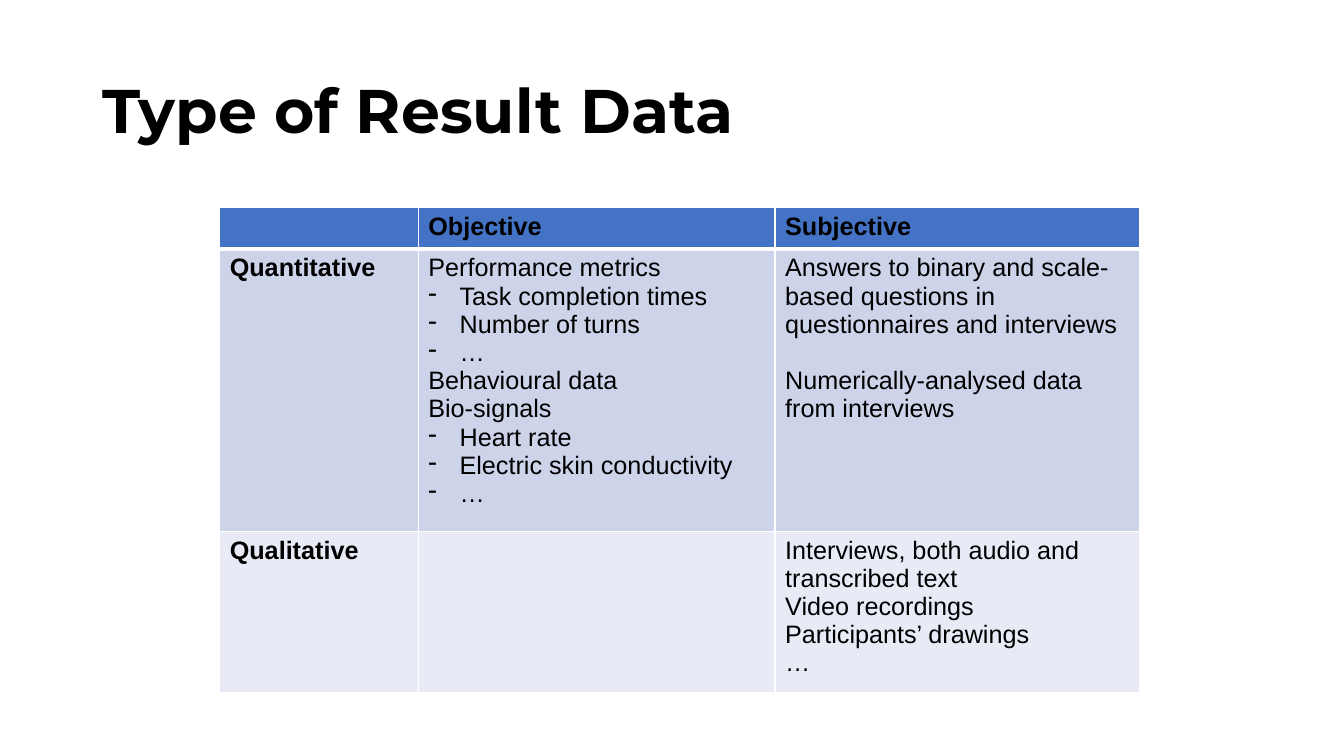
from dataclasses import dataclass

from lxml.etree import SubElement
from pptx import Presentation
from pptx.dml.color import RGBColor
from pptx.enum.text import MSO_ANCHOR
from pptx.oxml.ns import qn
from pptx.util import Emu, Inches, Pt


@dataclass(frozen=True)
class Theme:
    ink: str = "000000"
    rule: str = "FFFFFF"
    header_fill: str = "4472C4"
    quantitative_fill: str = "CDD4EA"
    qualitative_fill: str = "E8EBF5"
    title_font: str = "Montserrat"
    body_font: str = "Arial"
    title_size: int = 44
    body_size: int = 18
    thin_rule: int = 1
    header_rule: int = 3


@dataclass(frozen=True)
class Line:
    text: str
    dashed: bool = False
    gap_before: int = 0


@dataclass(frozen=True)
class Row:
    height: float
    fill: str
    cells: tuple[tuple[Line, ...], ...]


THEME = Theme()
COLUMN_WIDTHS = (1.97, 3.54, 3.62)
DASH_INDENT = Inches(0.31)

ROWS = (
    Row(0.41, THEME.header_fill, ((), (Line("Objective"),), (Line("Subjective"),))),
    Row(2.8, THEME.quantitative_fill, (
        (Line("Quantitative"),),
        (
            Line("Performance metrics"),
            Line("Task completion times", dashed=True),
            Line("Number of turns", dashed=True),
            Line("…", dashed=True),
            Line("Behavioural data"),
            Line("Bio-signals"),
            Line("Heart rate", dashed=True),
            Line("Electric skin conductivity", dashed=True),
            Line("…", dashed=True),
        ),
        (
            Line("Answers to binary and scale-based questions in questionnaires and interviews"),
            Line("Numerically-analysed data from interviews", gap_before=20),
        ),
    )),
    Row(1.5, THEME.qualitative_fill, (
        (Line("Qualitative"),),
        (),
        (
            Line("Interviews, both audio and transcribed text"),
            Line("Video recordings"),
            Line("Participants’ drawings"),
            Line("…"),
        ),
    )),
)


def add_run(paragraph, text: str, font_name: str, size: int, bold: bool) -> None:
    run = paragraph.add_run()
    run.text = text
    run.font.name = font_name
    run.font.size = Pt(size)
    run.font.bold = bold
    run.font.color.rgb = RGBColor.from_string(THEME.ink)


def add_dash(paragraph) -> None:
    """Give the paragraph a hanging dash bullet."""
    properties = paragraph._p.get_or_add_pPr()
    properties.set("marL", str(DASH_INDENT))
    properties.set("indent", str(-DASH_INDENT))
    SubElement(properties, qn("a:buFontTx"))
    SubElement(properties, qn("a:buChar"), char="-")


def add_borders(cell, top: int, bottom: int) -> None:
    properties = cell._tc.get_or_add_tcPr()
    weights = {"L": THEME.thin_rule, "R": THEME.thin_rule, "T": top, "B": bottom}
    for side, weight in weights.items():
        border = SubElement(properties, qn(f"a:ln{side}"), w=str(Pt(weight)))
        SubElement(SubElement(border, qn("a:solidFill")), qn("a:srgbClr"), val=THEME.rule)


def fill_cell(cell, lines: tuple[Line, ...], bold: bool) -> None:
    for index, line in enumerate(lines):
        frame = cell.text_frame
        paragraph = frame.add_paragraph() if index else frame.paragraphs[0]
        if line.gap_before:
            paragraph.space_before = Pt(line.gap_before)
        if line.dashed:
            add_dash(paragraph)
        add_run(paragraph, line.text, THEME.body_font, THEME.body_size, bold)


def add_title(slide, text: str) -> None:
    frame = slide.shapes.add_textbox(
        Inches(0.92), Inches(0.4), Inches(11.5), Inches(1.45)).text_frame
    frame.word_wrap = True
    frame.vertical_anchor = MSO_ANCHOR.MIDDLE
    paragraph = frame.paragraphs[0]
    paragraph.line_spacing = 0.9
    add_run(paragraph, text, THEME.title_font, THEME.title_size, bold=True)


def add_data_types(slide) -> None:
    table = slide.shapes.add_table(
        len(ROWS), len(COLUMN_WIDTHS), Inches(2.18), Inches(2.06),
        Inches(sum(COLUMN_WIDTHS)), Inches(sum(row.height for row in ROWS))).table
    for column, width in zip(table.columns, COLUMN_WIDTHS):
        column.width = Inches(width)
    for r, row in enumerate(ROWS):
        table.rows[r].height = Inches(row.height)
        top = THEME.header_rule if r == 1 else THEME.thin_rule
        bottom = THEME.header_rule if r == 0 else THEME.thin_rule
        for c, lines in enumerate(row.cells):
            cell = table.cell(r, c)
            add_borders(cell, top, bottom)
            cell.fill.solid()
            cell.fill.fore_color.rgb = RGBColor.from_string(row.fill)
            fill_cell(cell, lines, bold=r == 0 or c == 0)


def main() -> None:
    deck = Presentation()
    deck.slide_width, deck.slide_height = Emu(12192000), Inches(7.5)
    slide = deck.slides.add_slide(deck.slide_layouts[6])
    add_title(slide, "Type of Result Data")
    add_data_types(slide)
    deck.save("out.pptx")


if __name__ == "__main__":
    main()
